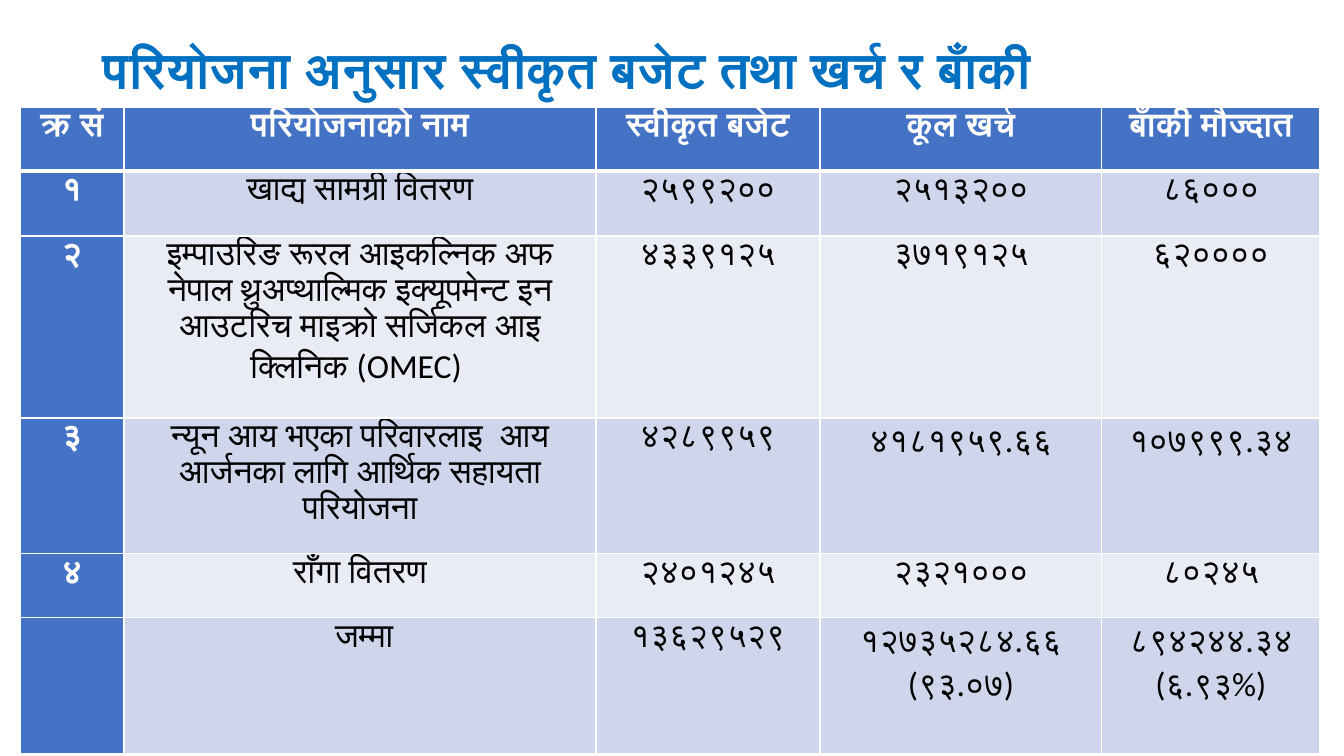
from lxml import etree
from pptx import Presentation
from pptx import util as u
from pptx.dml.color import RGBColor
from pptx.enum import text
from pptx.oxml import ns

WHITE, BLACK, BLUE, TITLE = "FFFFFF", "000000", "4472C4", "0070C0"
BANDS = ["CFD5EA", "E9EBF5"]
COLS = [104, 472, 224, 282, 218]
HEIGHTS = [64, 65, 182, 136, 64, 136]
ROWS = [
    ["क्र सं", "परियोजनाको नाम", "स्वीकृत बजेट", "कूल खर्च", "बाँकी मौज्दात"],
    ["१", "खाद्य सामग्री वितरण", "२५९९२००", "२५१३२००", "८६०००"],
    ["२", "इम्पाउरिङ रूरल आइकल्निक अफ नेपाल थ्रुअप्थाल्मिक इक्यूपमेन्ट इन "
     "आउटरिच माइक्रो सर्जिकल आइ क्लिनिक (OMEC) ", "४३३९१२५", "३७१९१२५", "६२००००"],
    ["३", "न्यून आय भएका परिवारलाइ  आय आर्जनका लागि आर्थिक सहायता परियोजना",
     "४२८९९५९", "४१८१९५९.६६", "१०७९९९.३४"],
    ["४", "राँगा वितरण", "२४०१२४५", "२३२१०००", "८०२४५"],
    ["", " जम्मा", "१३६२९५२९", "१२७३५२८४.६६\n(९३.०७)", "८९४२४४.३४\n(६.९३%)"],
]


def px(n):
    return u.Emu(round(n * 914400 / 100.8))


def tint(code):
    return RGBColor.from_string(code)


class Deck:
    """Holds the style and the current slide, and draws each kind of element."""

    def __init__(self):
        self.prs = Presentation()
        self.prs.slide_width, self.prs.slide_height = px(1344), px(756)
        self.slide = self.prs.slides.add_slide(self.prs.slide_layouts[6])

    def run(self, para, words, face, size, color, bold, gap):
        para.line_spacing = gap
        run = para.add_run()
        run.text = words
        font = run.font
        font.name, font.size, font.bold = face, u.Pt(size), bold
        font.color.rgb = tint(color)

    def title(self, words, left, top, width, height):
        frame = self.slide.shapes.add_textbox(
            px(left), px(top), px(width), px(height)).text_frame
        frame.word_wrap = True
        frame.vertical_anchor = text.MSO_ANCHOR.MIDDLE
        self.run(frame.paragraphs[0], words, "Times New Roman", 36, TITLE, True, 0.9)

    def edge(self, cell, side, width):
        line = etree.SubElement(cell._tc.get_or_add_tcPr(), ns.qn("a:ln" + side),
                                w=str(u.Pt(width)))
        fill = etree.SubElement(line, ns.qn("a:solidFill"))
        etree.SubElement(fill, ns.qn("a:srgbClr"), val=WHITE)

    def cell(self, cell, words, fill, color, bold, top, base):
        cell.margin_left = cell.margin_right = px(7)
        cell.margin_top = cell.margin_bottom = 0
        for side, width in zip("LRTB", (1, 1, top, base)):
            self.edge(cell, side, width)
        cell.fill.solid()
        cell.fill.fore_color.rgb = tint(fill)
        frame = cell.text_frame
        for i, part in enumerate(words.split("\n") if words else []):
            para = frame.add_paragraph() if i else frame.paragraphs[0]
            para.alignment = text.PP_ALIGN.CENTER
            self.run(para, part, "Calibri", 24, color, bold, 1.07)

    def table(self, rows, left, top, cols, heights):
        grid = self.slide.shapes.add_table(
            len(rows), len(cols), px(left), px(top),
            px(sum(cols)), px(sum(heights))).table
        grid.horz_banding = False
        for col, width in zip(grid.columns, cols):
            col.width = px(width)
        for r, row in enumerate(rows):
            grid.rows[r].height = px(heights[r])
            for c, words in enumerate(row):
                head = r == 0 or c == 0
                fill = BLUE if head else BANDS[(r - 1) % 2]
                self.cell(grid.cell(r, c), words, fill, WHITE if head else BLACK,
                          head, 3 if r == 1 else 1, 3 if r == 0 else 1)


def main():
    deck = Deck()
    deck.title("परियोजना अनुसार स्वीकृत बजेट तथा खर्च र बाँकी", 93, 19, 1159, 107)
    deck.table(ROWS, 20, 107, COLS, HEIGHTS)
    deck.prs.save("out.pptx")


if __name__ == "__main__":
    main()
